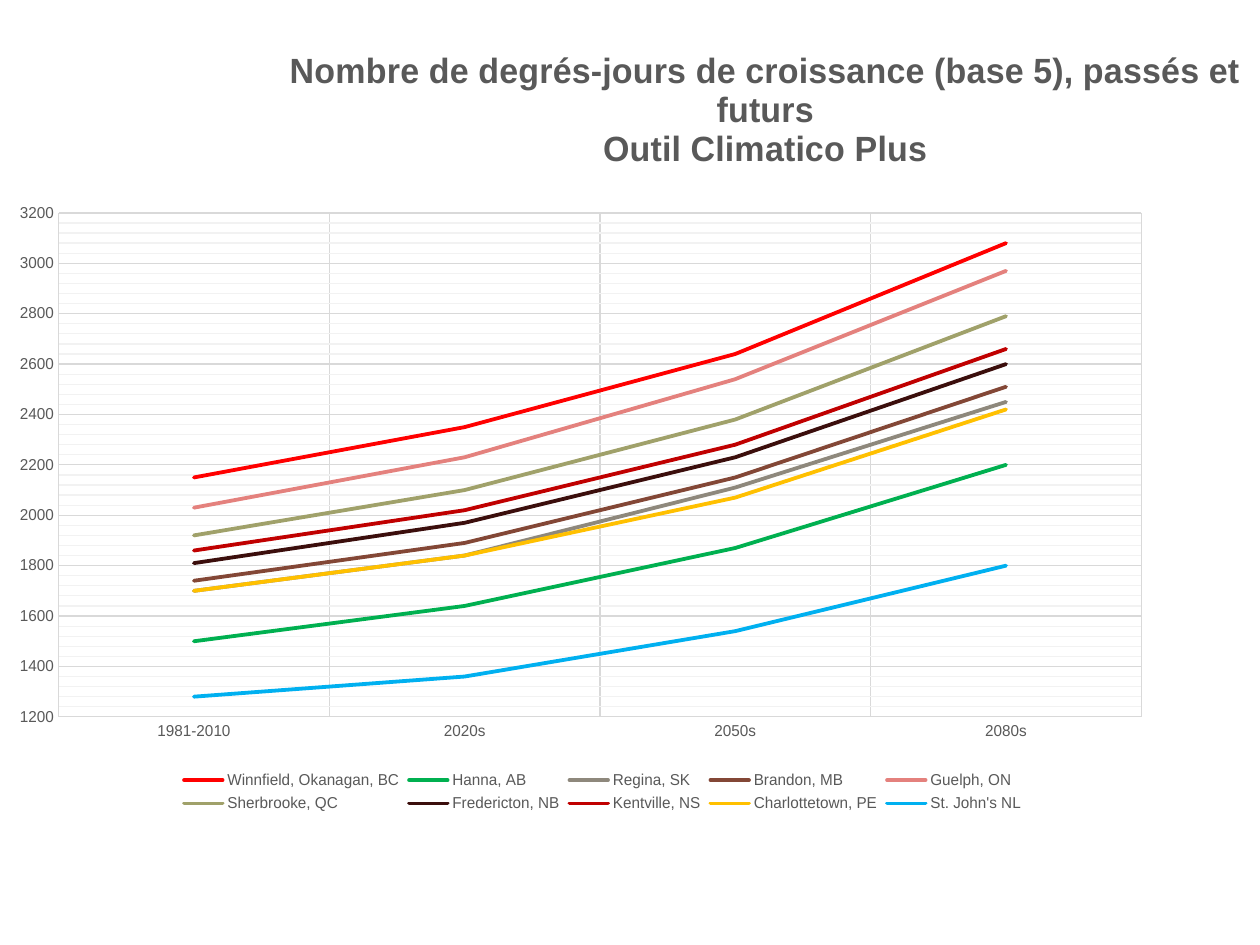
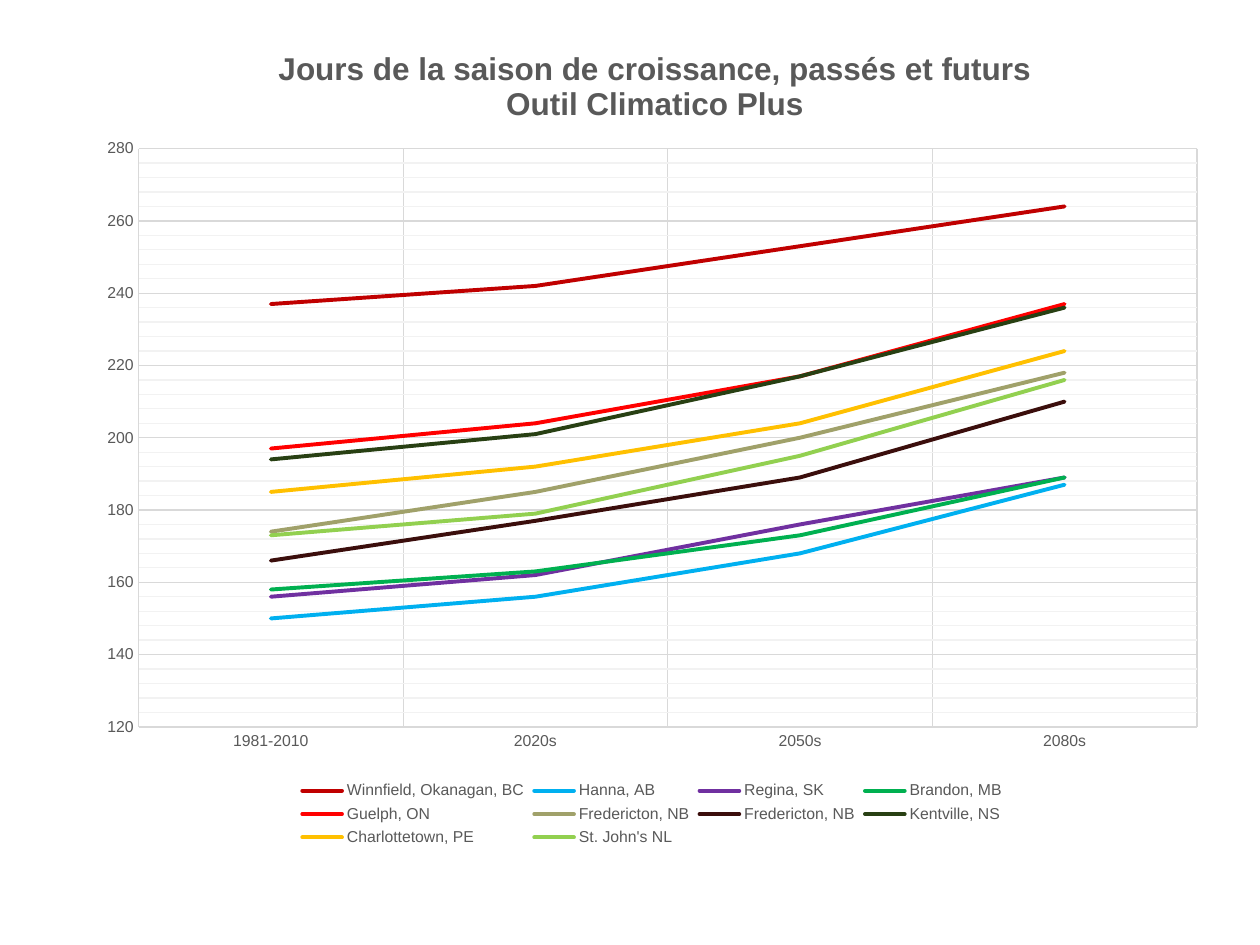
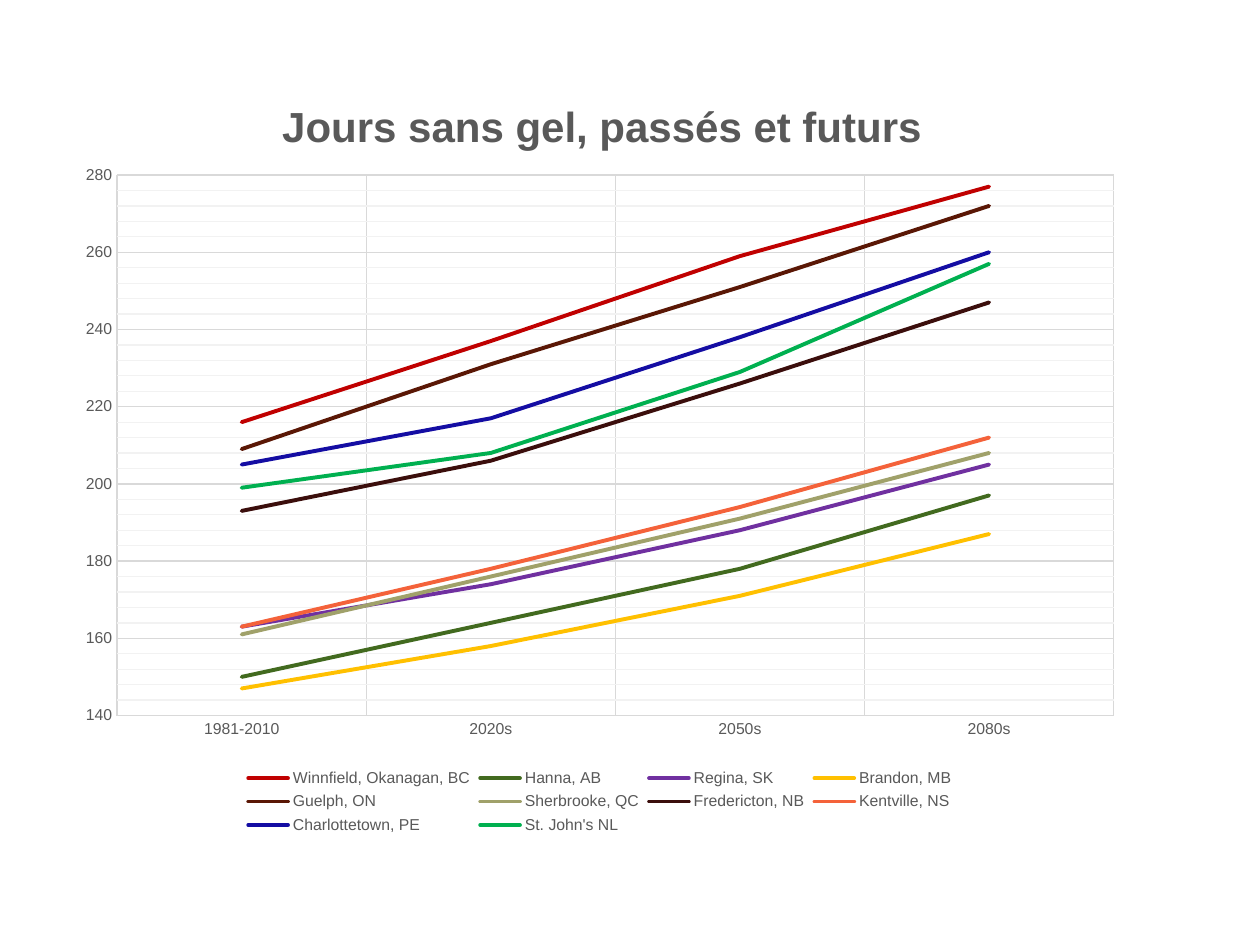
from lxml import etree
from pptx import Presentation
from pptx.chart.data import CategoryChartData
from pptx.dml.color import RGBColor
from pptx.enum.chart import XL_CHART_TYPE, XL_LEGEND_POSITION, XL_TICK_MARK
from pptx.oxml.ns import qn
from pptx.util import Inches, Pt

LINE_CHART = XL_CHART_TYPE.LINE
LEGEND_BOTTOM = XL_LEGEND_POSITION.BOTTOM
NO_TICK = XL_TICK_MARK.NONE

FONT = "Arial"
TEXT_GREY = "595959"
GRID_GREY = "D9D9D9"
MINOR_GREY = "F2F2F2"
MINOR_STEPS = 5
BLANK_LAYOUT = 6

PERIODS = ["1981-2010", "2020s", "2050s", "2080s"]
SLIDES = [
    {
        "title": [
            "Nombre de degrés-jours de croissance (base 5), passés et futurs",
            "Outil Climatico Plus",
        ],
        "title_size": 20,
        "title_at": (2.34, 0.36),
        "frame": (-0.02, 0.29, 9.9, 6.2),
        "plot": (0.48, 1.69, 8.86, 4.0),
        "scale": (1200, 3200, 200),
        "places": [
            ("Winnfield, Okanagan, BC", "FF0000", (2150, 2350, 2640, 3080)),
            ("Hanna, AB", "00B050", (1500, 1640, 1870, 2200)),
            ("Regina, SK", "8E887C", (1700, 1840, 2110, 2450)),
            ("Brandon, MB", "834736", (1740, 1890, 2150, 2510)),
            ("Guelph, ON", "E4817D", (2030, 2230, 2540, 2970)),
            ("Sherbrooke, QC", "A0A16A", (1920, 2100, 2380, 2790)),
            ("Fredericton, NB", "3B0E0C", (1810, 1970, 2230, 2600)),
            ("Kentville, NS", "C00000", (1860, 2020, 2280, 2660)),
            ("Charlottetown, PE", "FFC000", (1700, 1840, 2070, 2420)),
            ("St. John's NL", "00B0F0", (1280, 1360, 1540, 1800)),
        ],
    },
    {
        "title": [
            "Jours de la saison de croissance, passés et futurs",
            "Outil Climatico Plus",
        ],
        "title_size": 18,
        "title_at": (2.18, 0.36),
        "frame": (0.67, 0.13, 9.01, 6.63),
        "plot": (1.1, 1.18, 8.4, 4.59),
        "scale": (120, 280, 20),
        "places": [
            ("Winnfield, Okanagan, BC", "C00000", (237, 242, 253, 264)),
            ("Hanna, AB", "00B0F0", (150, 156, 168, 187)),
            ("Regina, SK", "7030A0", (156, 162, 176, 189)),
            ("Brandon, MB", "00B050", (158, 163, 173, 189)),
            ("Guelph, ON", "FF0000", (197, 204, 217, 237)),
            ("Fredericton, NB", "A0A16A", (174, 185, 200, 218)),
            ("Fredericton, NB", "3B0E0C", (166, 177, 189, 210)),
            ("Kentville, NS", "284013", (194, 201, 217, 236)),
            ("Charlottetown, PE", "FFC000", (185, 192, 204, 224)),
            ("St. John's NL", "92D050", (173, 179, 195, 216)),
        ],
    },
    {
        "title": ["Jours sans gel, passés et futurs"],
        "title_size": 24,
        "title_at": (2.18, 0.73),
        "frame": (0.51, 0.44, 8.5, 6.22),
        "plot": (0.93, 1.39, 7.91, 4.29),
        "scale": (140, 280, 20),
        "places": [
            ("Winnfield, Okanagan, BC", "C00000", (216, 237, 259, 277)),
            ("Hanna, AB", "426A1F", (150, 164, 178, 197)),
            ("Regina, SK", "7030A0", (163, 174, 188, 205)),
            ("Brandon, MB", "FFC000", (147, 158, 171, 187)),
            ("Guelph, ON", "5A1705", (209, 231, 251, 272)),
            ("Sherbrooke, QC", "A0A16A", (161, 176, 191, 208)),
            ("Fredericton, NB", "3B0E0C", (193, 206, 226, 247)),
            ("Kentville, NS", "F4623A", (163, 178, 194, 212)),
            ("Charlottetown, PE", "140DA3", (205, 217, 238, 260)),
            ("St. John's NL", "00B050", (199, 208, 229, 257)),
        ],
    },
]


def rgb(color):
    return RGBColor.from_string(color)


def format_font(font, size=9, color=TEXT_GREY, bold=False):
    font.name = FONT
    font.size = Pt(size)
    font.bold = bold
    font.color.rgb = rgb(color)


def write_text(frame, lines, **style):
    frame.text = "\n".join(lines)
    for paragraph in frame.paragraphs:
        for run in paragraph.runs:
            format_font(run.font, **style)


def draw_line(line, color, width=0.75):
    line.color.rgb = rgb(color)
    line.width = Pt(width)


def draw_minor_gridlines(axis, color, width=0.75):
    axis.has_minor_gridlines = True
    gridlines = axis._element.find(qn("c:minorGridlines"))
    properties = etree.SubElement(gridlines, qn("c:spPr"))
    line = etree.SubElement(properties, qn("a:ln"), w=str(Pt(width)))
    fill = etree.SubElement(line, qn("a:solidFill"))
    etree.SubElement(fill, qn("a:srgbClr"), val=color)


def place(part, position, frame, box, inner=False):
    for layout in part.findall(qn("c:layout")):
        part.remove(layout)
    left, top, width, height = frame
    fractions = [(box[0] - left) / width, (box[1] - top) / height]
    fractions += [length / whole for length, whole in zip(box[2:], (width, height))]
    layout = etree.Element(qn("c:layout"))
    manual = etree.SubElement(layout, qn("c:manualLayout"))
    settings = [("layoutTarget", "inner")] if inner else []
    settings += [("xMode", "edge"), ("yMode", "edge")]
    settings += [(key, f"{value:.4f}") for key, value in zip("xywh", fractions)]
    for key, value in settings:
        etree.SubElement(manual, qn(f"c:{key}")).set("val", value)
    part.insert(position, layout)


def format_axes(chart, scale):
    periods, days = chart.category_axis, chart.value_axis
    for axis in (periods, days):
        axis.major_tick_mark = axis.minor_tick_mark = NO_TICK
        axis.has_major_gridlines = True
        draw_line(axis.major_gridlines.format.line, GRID_GREY)
        format_font(axis.tick_labels.font)
    draw_line(periods.format.line, GRID_GREY)
    days.format.line.fill.background()
    days.minimum_scale, days.maximum_scale, days.major_unit = scale
    days.minor_unit = days.major_unit / MINOR_STEPS
    draw_minor_gridlines(days, MINOR_GREY)
    days.tick_labels.number_format = "0"
    days.tick_labels.number_format_is_linked = False


def add_climate_chart(slide, content):
    data = CategoryChartData()
    data.categories = PERIODS
    for place_name, _, values in content["places"]:
        data.add_series(place_name, values)
    frame = content["frame"]
    chart = slide.shapes.add_chart(LINE_CHART, *map(Inches, frame), data).chart
    format_font(chart.font, size=10, color="000000")
    chart.plots[0].vary_by_categories = False

    for series, (_, color, _) in zip(chart.plots[0].series, content["places"]):
        series.smooth = False
        draw_line(series.format.line, color, 2.25)
        series.format.line._get_or_add_ln().set("cap", "rnd")

    format_axes(chart, content["scale"])
    chart.has_legend = True
    chart.legend.position = LEGEND_BOTTOM
    chart.legend.include_in_layout = False
    format_font(chart.legend.font)

    chart.has_title = True
    write_text(chart.chart_title.text_frame, content["title"],
               size=content["title_size"], bold=True)
    chart_part = chart._chartSpace.chart
    place(chart_part.find(qn("c:title")), 1, frame, content["title_at"])
    place(chart_part.plotArea, 0, frame, content["plot"], inner=True)


def main():
    deck = Presentation()
    deck.slide_width, deck.slide_height = Inches(10), Inches(7.5)
    for content in SLIDES:
        slide = deck.slides.add_slide(deck.slide_layouts[BLANK_LAYOUT])
        add_climate_chart(slide, content)
    deck.save("out.pptx")


if __name__ == "__main__":
    main()
